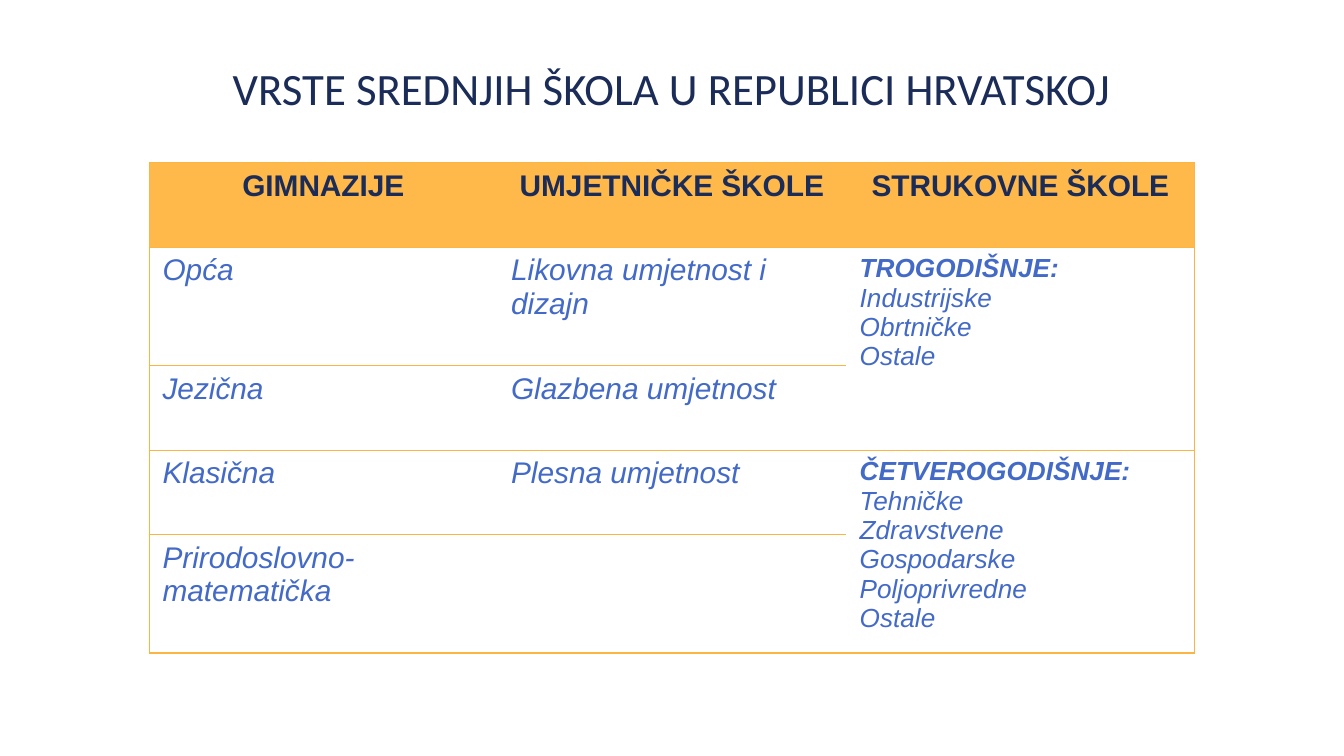
from lxml import etree
from pptx import Presentation
from pptx.dml.color import RGBColor
from pptx.enum import text
from pptx.oxml import ns
from pptx.util import Inches, Pt

NAVY, BLUE, ORANGE, HEADER = "1A2C57", "436AC7", "FCB543", "FFB84A"


def style(p, size, color, name="Arial", bold=False, italic=False):
    f = p.font
    f.name, f.size, f.bold, f.italic = name, Pt(size), bold, italic
    f.color.rgb = RGBColor.from_string(color)


def set_borders(cell, sides):
    """Draw the borders named in sides (from "LRTB") and clear the others."""
    tcPr = cell._tc.get_or_add_tcPr()
    for side in "LRTB":
        ln = etree.SubElement(tcPr, ns.qn(f"a:ln{side}"), w=str(Pt(0.75)))
        if side in sides:
            fill = etree.SubElement(ln, ns.qn("a:solidFill"))
            etree.SubElement(fill, ns.qn("a:srgbClr"), val=ORANGE)
        else:
            etree.SubElement(ln, ns.qn("a:noFill"))


prs = Presentation()
prs.slide_width = Inches(10)
prs.slide_height = Inches(10 * 9 / 16)
s = prs.slides.add_slide(prs.slide_layouts[6])

# Title
tf = s.shapes.add_textbox(Inches(0.55), Inches(0.35), Inches(8.89), Inches(0.74)).text_frame
tf.word_wrap = True
tf.margin_left = tf.margin_right = tf.margin_top = tf.margin_bottom = Inches(0.1)
p = tf.paragraphs[0]
p.text = "VRSTE SREDNJIH ŠKOLA U REPUBLICI HRVATSKOJ"
p.alignment = text.PP_ALIGN.CENTER
style(p, 24, NAVY, "Calibri")

# Table of school types
rows = [
    ["GIMNAZIJE", "UMJETNIČKE ŠKOLE", "STRUKOVNE ŠKOLE"],
    ["Opća", "Likovna umjetnost i dizajn",
     "TROGODIŠNJE:\nIndustrijske\nObrtničke\nOstale"],
    ["Jezična", "Glazbena umjetnost", ""],
    ["Klasična", "Plesna umjetnost",
     "ČETVEROGODIŠNJE:\nTehničke\nZdravstvene\nGospodarske\nPoljoprivredne\nOstale"],
    ["Prirodoslovno-matematička", "", ""],
]
heights = [0.63, 0.88, 0.63, 0.63, 0.88]
table = s.shapes.add_table(5, 3, Inches(1.11), Inches(1.21),
                           Inches(7.78), Inches(sum(heights))).table
table.horz_banding = False
for row, height in zip(table.rows, heights):
    row.height = Inches(height)
for top in (1, 3):
    table.cell(top, 2).merge(table.cell(top + 1, 2))

for r, words in enumerate(rows):
    for c, word in enumerate(words):
        cell = table.cell(r, c)
        sides = "B" if cell.is_spanned else "TB"
        set_borders(cell, sides + ("L", "", "R")[c])
        if r == 0:
            cell.fill.solid()
            cell.fill.fore_color.rgb = RGBColor.from_string(HEADER)
        else:
            cell.fill.background()
        cell.text = word
        for i, p in enumerate(cell.text_frame.paragraphs):
            if r == 0:
                p.alignment = text.PP_ALIGN.CENTER
                style(p, 16, NAVY, bold=True)
            elif c == 2:
                style(p, 14, BLUE, bold=i == 0, italic=True)
            else:
                style(p, 16, BLUE, italic=True)

prs.save("out.pptx")
